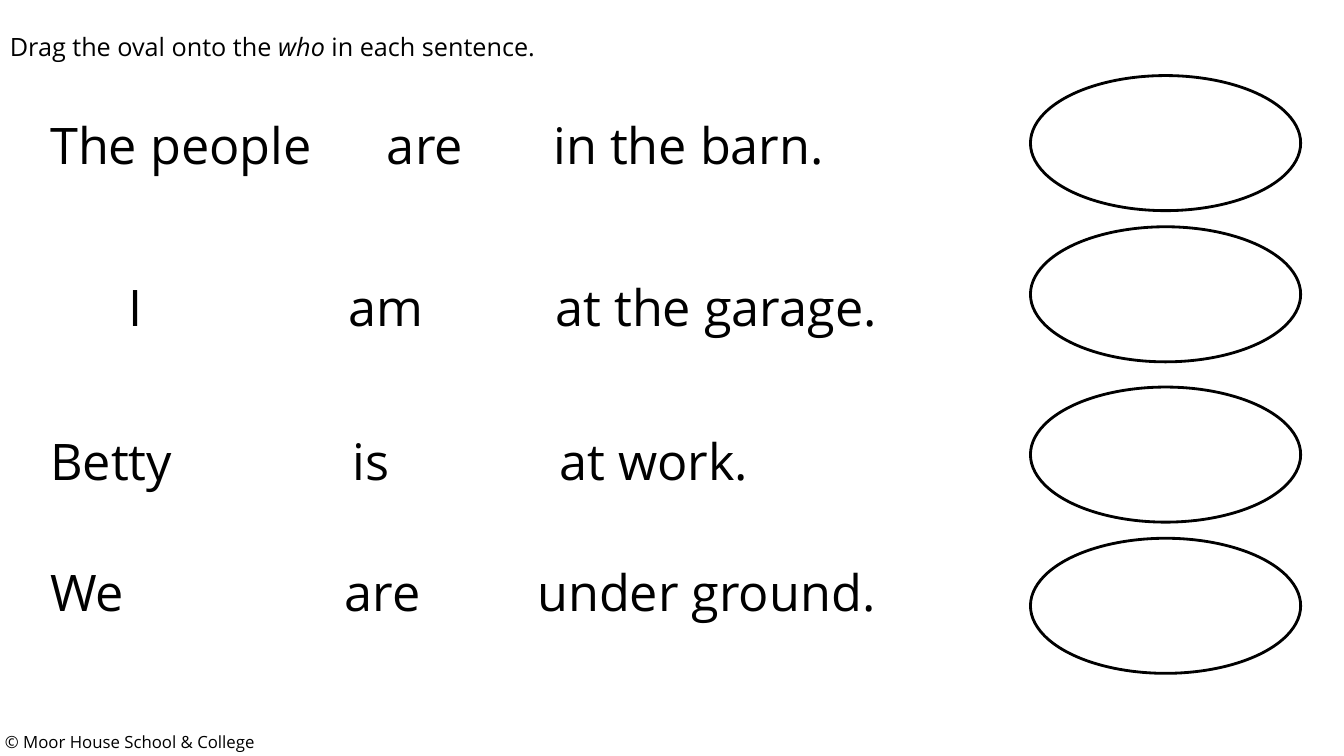
from dataclasses import dataclass

from pptx import Presentation
from pptx.dml.color import RGBColor as RGB
from pptx.enum.shapes import MSO_SHAPE as SHAPE
from pptx.oxml.xmlchemy import OxmlElement as Element
from pptx.util import Inches, Pt


@dataclass(frozen=True)
class Theme:
    font: str = "Open Sans"
    ink: RGB = RGB(0, 0, 0)
    paper: RGB = RGB(255, 255, 255)
    footer: int = 12
    instruction: int = 18
    sentence: int = 36
    outline: int = 2


theme = Theme()


def add_text(s, box, runs, size, tabs=()):
    tb = s.shapes.add_textbox(*map(Inches, box))
    tf = tb.text_frame
    tf.word_wrap = True
    p = tf.paragraphs[0]
    if tabs:
        tab_list = Element("a:tabLst")
        for position in tabs:
            tab = Element("a:tab")
            tab.set("pos", str(Inches(position)))
            tab.set("algn", "l")
            tab_list.append(tab)
        p._p.get_or_add_pPr().append(tab_list)
    p.font.name = theme.font
    p.font.size = Pt(size)
    p.font.color.rgb = theme.ink
    for text, italic in runs:
        r = p.add_run()
        r.text = text
        if italic:
            r.font.italic = True


prs = Presentation()
prs.slide_width, prs.slide_height = Inches(13.33), Inches(7.5)
s = prs.slides.add_slide(prs.slide_layouts[6])
s.background.fill.solid()
s.background.fill.fore_color.rgb = theme.paper

add_text(s, (-0.05, 7.21, 5.12, 0.3),
         [("© Moor House School & College", False)], theme.footer)
add_text(s, (0, 0.26, 13.1, 0.4),
         [("Drag the oval onto the ", False), ("who", True),
          (" in each sentence.", False)], theme.instruction)

sentences = [
    (1.08, 8.84, "The people\tare\tin the barn.", (3.34, 4.99)),
    (2.69, 9.19, "\tI\tam\tat the garage.", (0.78, 2.96, 5.01)),
    (4.22, 9.39, "Betty\tis\tat work.", (3, 5.05)),
    (5.52, 9.25, "We\tare\tunder ground.", (2.92, 4.83)),
]
for top, width, text, tabs in sentences:
    add_text(s, (0.4, top, width, 0.71), [(text, False)], theme.sentence, tabs)

for top in (0.75, 2.25, 3.84, 5.34):
    oval = s.shapes.add_shape(SHAPE.OVAL, Inches(10.22), Inches(top),
                              Inches(2.68), Inches(1.34))
    oval.shadow.inherit = False
    oval.fill.background()
    oval.line.color.rgb = theme.ink
    oval.line.width = Pt(theme.outline)

prs.save("out.pptx")
